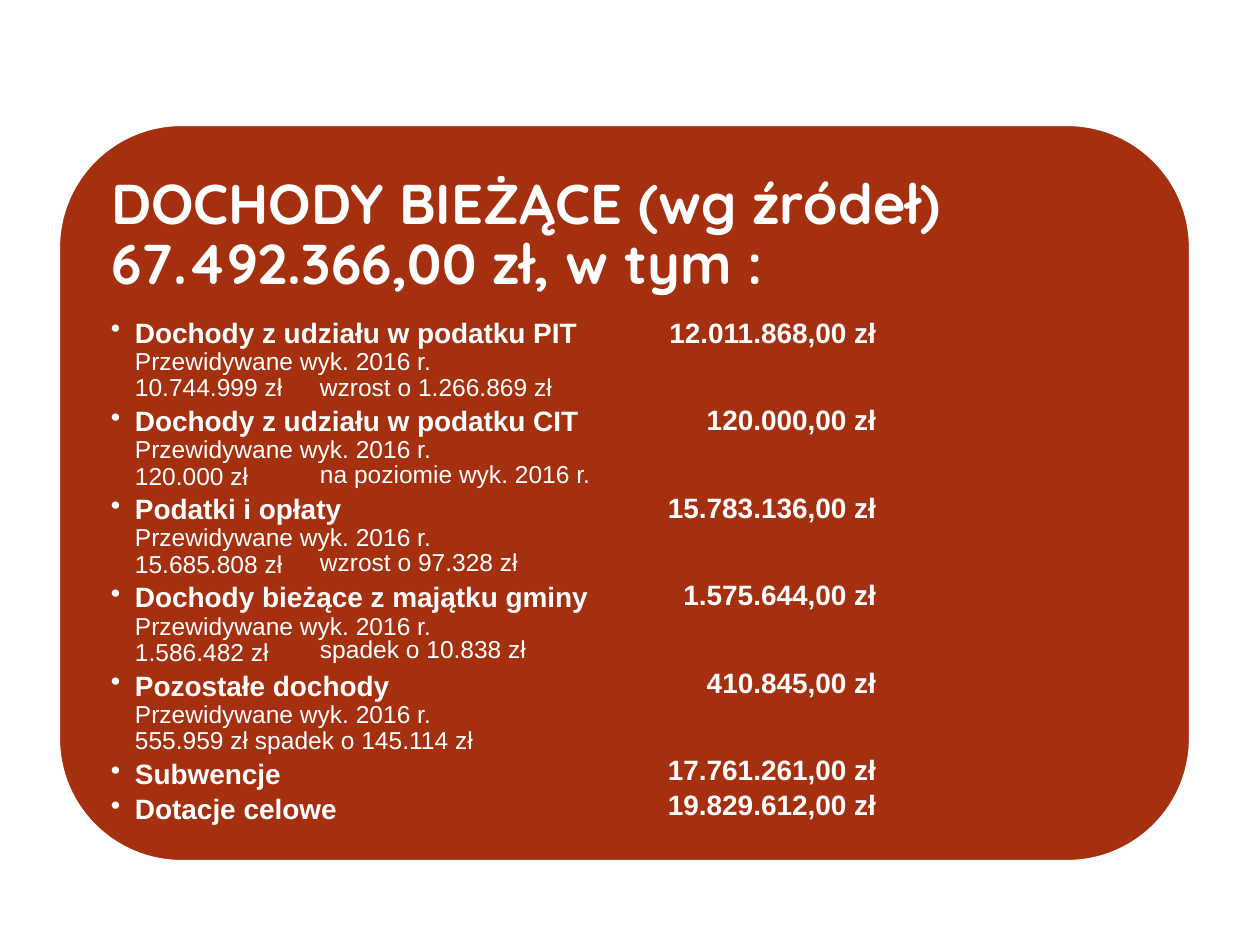
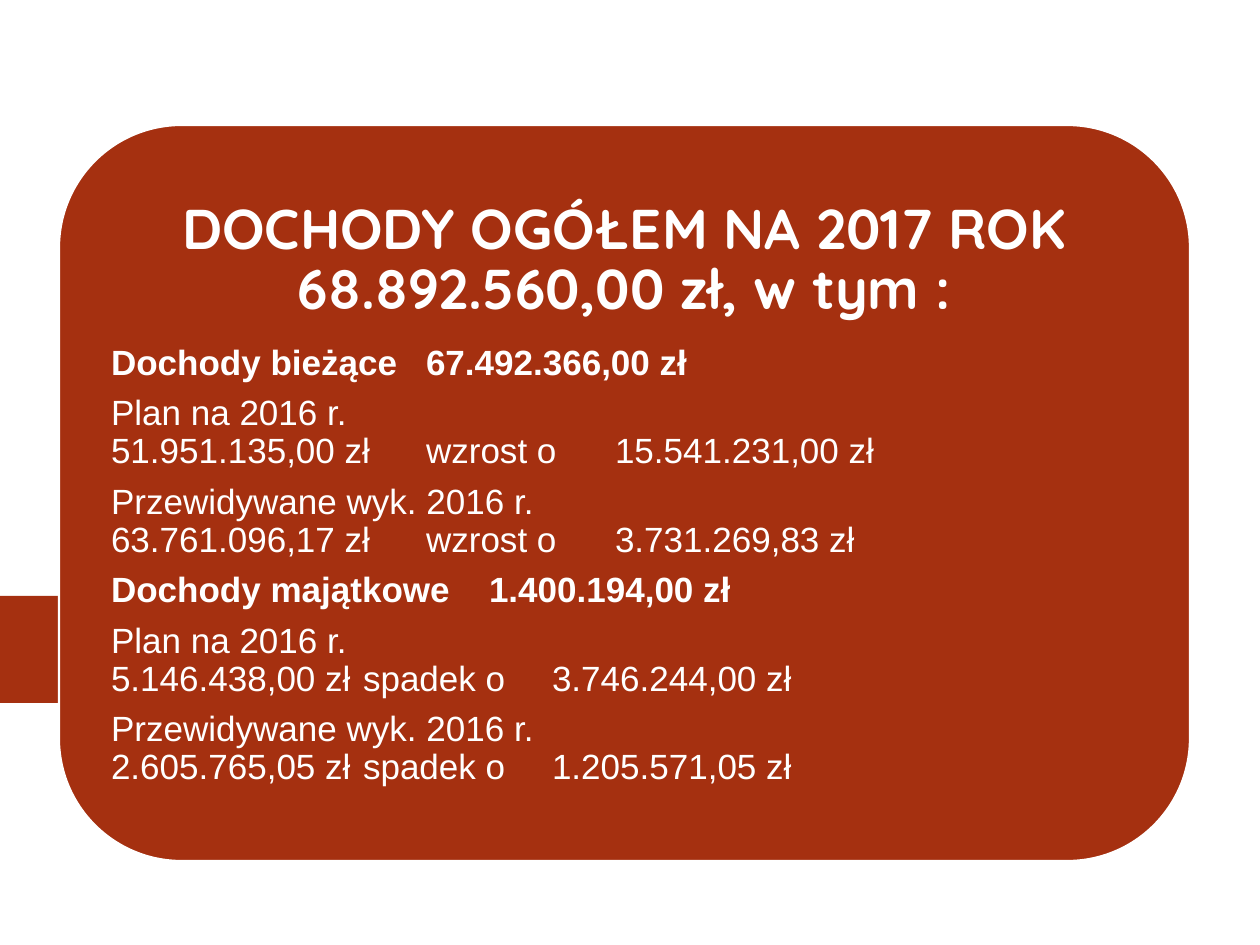
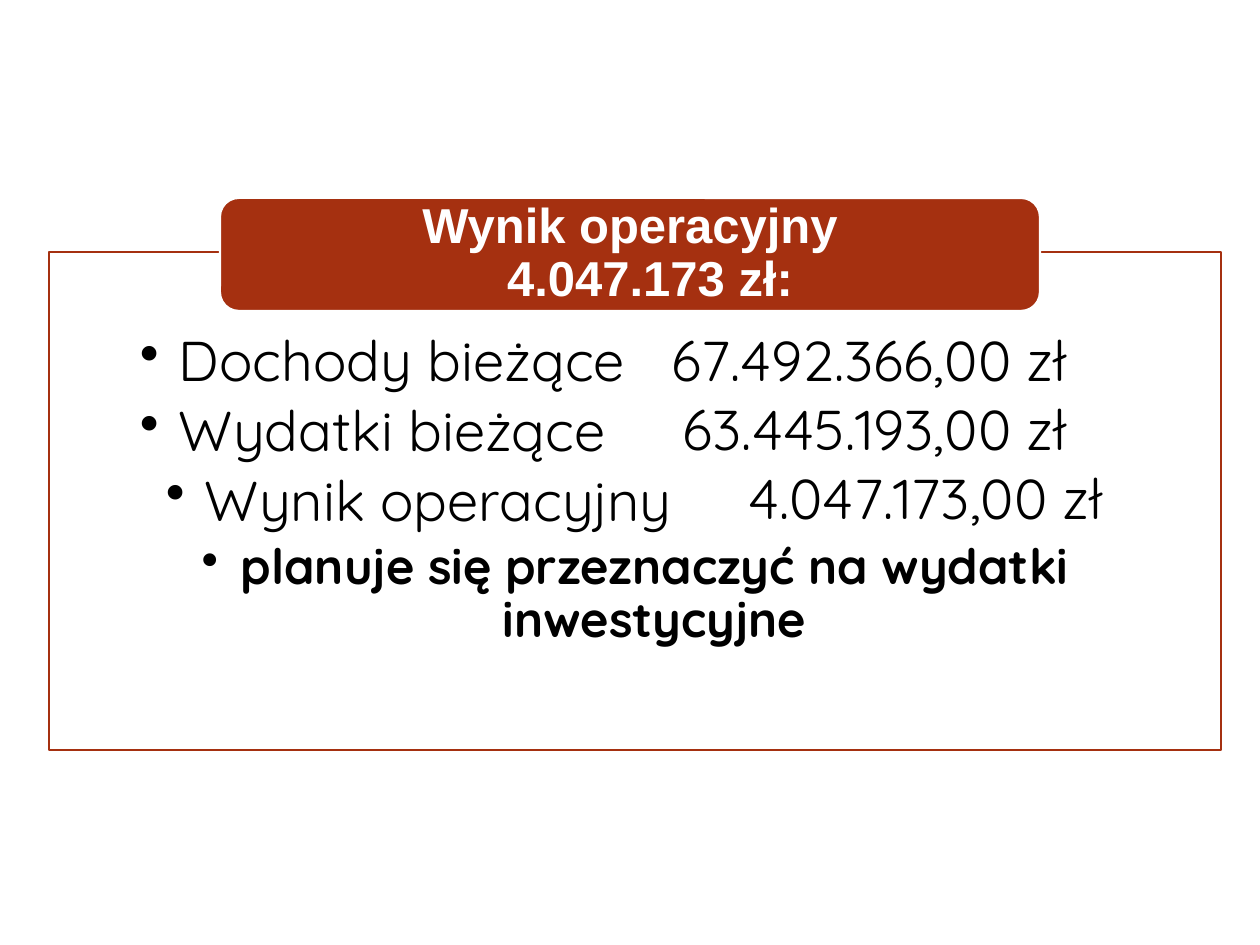
from copy import deepcopy

from lxml import etree
from pptx import Presentation
from pptx import util as u
from pptx.dml.color import RGBColor
from pptx.enum import shapes, text
from pptx.oxml.ns import qn

PX = 7257
COLORS = {"rust": "A53010", "white": "FFFFFF", "black": "000000"}
LEFT, CENTER, RIGHT = text.PP_ALIGN.LEFT, text.PP_ALIGN.CENTER, text.PP_ALIGN.RIGHT
TOP, MIDDLE = text.MSO_ANCHOR.TOP, text.MSO_ANCHOR.MIDDLE


def place(box, bounds, anchor=TOP):
    box.left, box.top, box.width, box.height = [value * PX for value in bounds]
    frame = box.text_frame
    frame.auto_size = text.MSO_AUTO_SIZE.NONE
    frame.word_wrap = True
    frame.vertical_anchor = anchor
    frame.margin_left = frame.margin_right = frame.margin_top = frame.margin_bottom = 0
    return frame


def add_para(frame, lines, font="Arial", color="white", align=LEFT, after=0,
             margin=0, hang=0, tabs=()):
    para = frame.paragraphs[0] if not frame.paragraphs[0].runs else frame.add_paragraph()
    props = para._p.get_or_add_pPr()
    props.set("marL", str(margin * PX))
    props.set("indent", str(-hang * PX))
    if hang:
        etree.SubElement(props, qn("a:buChar")).set("char", "•")
    else:
        etree.SubElement(props, qn("a:buNone"))
    if tabs:
        stops = etree.SubElement(props, qn("a:tabLst"))
        for position, side in tabs:
            stop = etree.SubElement(stops, qn("a:tab"))
            stop.set("pos", str(position * PX))
            stop.set("algn", side)
    para.alignment = align
    para.line_spacing = 0.9
    para.space_before = u.Pt(0)
    para.space_after = u.Pt(after)
    for index, (words, size, bold) in enumerate(lines):
        span = para.add_run()
        span.text = words
        span.font.name = font
        span.font.size = u.Pt(size)
        span.font.bold = bold
        span.font.color.rgb = RGBColor.from_string(COLORS[color])
        if index < len(lines) - 1:
            para.add_line_break()
            para._p[-1].append(deepcopy(span._r.rPr))


deck = Presentation()
deck.slide_width = 1260 * PX
deck.slide_height = 945 * PX
pages = [deck.slides.add_slide(deck.slide_layouts[5]) for _ in range(3)]
income, total, result = pages

arrow = total.shapes.build_freeform(0, 596, scale=PX)
arrow.add_line_segments(
    [(135, 596), (139, 598), (188, 646), (188, 653), (139, 701), (135, 703), (0, 703)])
tab_arrow = arrow.convert_to_shape()
tab_arrow.shadow.inherit = False
tab_arrow.fill.solid()
tab_arrow.fill.fore_color.rgb = RGBColor.from_string(COLORS["rust"])
tab_arrow.line.fill.background()

ROUND, RECT = shapes.MSO_SHAPE.ROUNDED_RECTANGLE, shapes.MSO_SHAPE.RECTANGLE
PANEL = (59, 125, 1131, 736)
for page, preset, bounds, fill, line in [
    (income, ROUND, PANEL, "rust", "white"),
    (total, ROUND, PANEL, "rust", "white"),
    (result, RECT, (49, 252, 1172, 498), "white", "rust"),
    (result, ROUND, (220, 198, 820, 113), "rust", "white"),
]:
    panel = page.shapes.add_shape(preset, *[value * PX for value in bounds])
    panel.shadow.inherit = False
    panel.fill.solid()
    panel.fill.fore_color.rgb = RGBColor.from_string(COLORS[fill])
    panel.line.color.rgb = RGBColor.from_string(COLORS[line])
    panel.line.width = u.Pt(1.25)

for page, top, align, lines in [
    (income, 176, LEFT, ["DOCHODY BIEŻĄCE (wg źródeł)", "67.492.366,00 zł, w tym :"]),
    (total, 201, CENTER, ["DOCHODY OGÓŁEM NA 2017 ROK", "68.892.560,00 zł, w tym :"]),
]:
    title = page.shapes.title
    page.shapes._spTree.append(title._element)
    frame = place(title, (111, top, 1027, 126))
    add_para(frame, [(line, 32, True) for line in lines], "Quicksand", align=align)

title = result.shapes.title
result.shapes._spTree.append(title._element)
frame = place(title, (226, 203, 808, 103), MIDDLE)
add_para(frame, [("Wynik operacyjny", 28, True)], align=CENTER)
add_para(frame, [("4.047.173 zł:", 28, True)], align=CENTER, margin=40)

sources = [
    ("Dochody z udziału w podatku PIT", "12.011.868,00 zł", "10.744.999 zł", "wzrost o 1.266.869 zł"),
    ("Dochody z udziału w podatku CIT", "120.000,00 zł", "120.000 zł", "na poziomie wyk. 2016 r."),
    ("Podatki i opłaty", "15.783.136,00 zł", "15.685.808 zł", "wzrost o 97.328 zł"),
    ("Dochody bieżące z majątku gminy", "1.575.644,00 zł", "1.586.482 zł", "spadek o 10.838 zł"),
    ("Pozostałe dochody", "410.845,00 zł", "555.959 zł spadek o 145.114 zł", ""),
    ("Subwencje", "17.761.261,00 zł", "", ""),
    ("Dotacje celowe", "19.829.612,00 zł", "", ""),
]
body = place(income.shapes.add_textbox(0, 0, 0, 0), (111, 319, 540, 520))
for index, (label, amount, forecast, change) in enumerate(sources):
    lines = [(label, 16, True)]
    if forecast:
        lines += [("Przewidywane wyk. 2016 r.", 14, False), (forecast, 14, False)]
    add_para(body, lines, after=2.9, margin=24, hang=24)
    top = 319 + min(index, 5) * 175 // 2 + max(index - 5, 0) * 35
    cell = place(income.shapes.add_textbox(0, 0, 0, 0), (656, top, 220, 30))
    add_para(cell, [(amount, 16, True)], align=RIGHT)
    if change:
        cell = place(income.shapes.add_textbox(0, 0, 0, 0), (320, top + 56, 330, 27))
        add_para(cell, [(change, 14, False)])

groups = [
    ("Dochody bieżące\t67.492.366,00 zł",
     "51.951.135,00 zł\twzrost o\t15.541.231,00 zł",
     "63.761.096,17 zł\twzrost o\t3.731.269,83 zł"),
    ("Dochody majątkowe\t1.400.194,00 zł",
     "5.146.438,00 zł\tspadek o\t3.746.244,00 zł",
     "2.605.765,05 zł\tspadek o\t1.205.571,05 zł"),
]
body = place(total.shapes.add_textbox(0, 0, 0, 0), (111, 345, 1027, 450))
for heading, plan, forecast in groups:
    add_para(body, [(heading, 20, True)], after=7.3, tabs=[(975, "r")])
    for label, values in [("Plan na 2016 r.", plan), ("Przewidywane wyk. 2016 r.", forecast)]:
        add_para(body, [(label, 20, False), (values, 20, False)], after=7.3,
                 tabs=[(318, "l"), (727, "r")])

body = place(result.shapes.add_textbox(0, 0, 0, 0), (140, 333, 990, 385))
for index, (label, amount, margin, right) in enumerate([
    ("Dochody bieżące", "67.492.366,00 zł", 39, 1067),
    ("Wydatki bieżące", "63.445.193,00 zł", 39, 1067),
    ("Wynik operacyjny", "4.047.173,00 zł", 65, 1103),
]):
    add_para(body, [(label, 32, False)], "Quicksand", "black", after=5.3, margin=margin, hang=39)
    cell = place(result.shapes.add_textbox(0, 0, 0, 0), (right - 420, 333 + index * 69, 420, 63))
    add_para(cell, [(amount, 32, False)], "Quicksand", "black", RIGHT)
add_para(body, [("planuje się przeznaczyć na wydatki inwestycyjne", 28, True)],
         "Quicksand", "black", CENTER, margin=39, hang=39)

deck.save("out.pptx")
